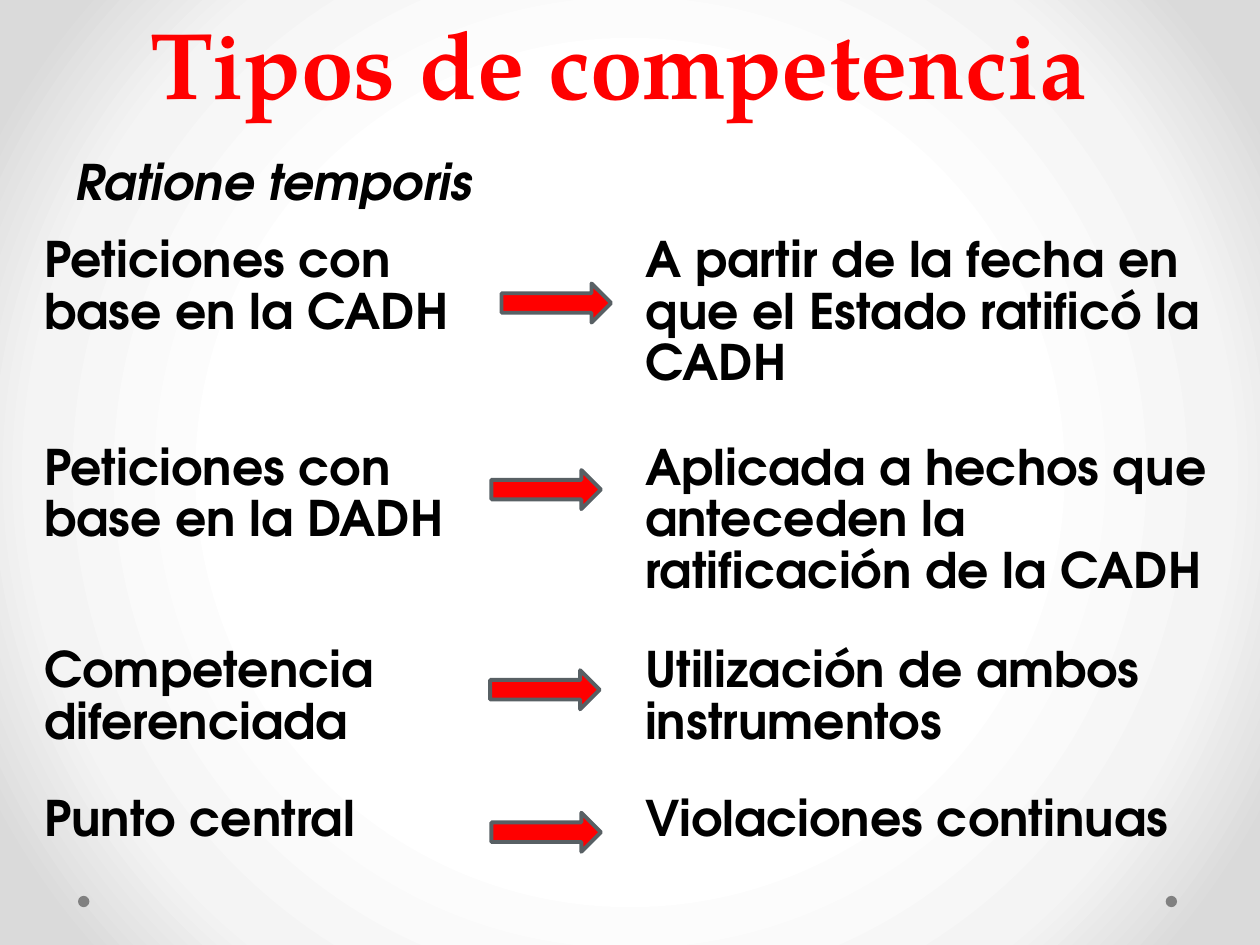
from lxml import etree
from pptx import Presentation
from pptx import util as u
from pptx.dml.color import RGBColor
from pptx.enum import shapes, text
from pptx.oxml import ns

Pt = u.Pt
RED = RGBColor(0xFF, 0x00, 0x00)
BLACK = RGBColor(0x00, 0x00, 0x00)
GRAY = RGBColor(0x80, 0x80, 0x80)
SLATE = RGBColor(0x58, 0x60, 0x64)
WHITE = RGBColor(0xFF, 0xFF, 0xFF)
PALE = RGBColor(0xF4, 0xF4, 0xF4)
SILVER = RGBColor(0xDA, 0xDA, 0xDA)
HEADING_FONT = "TeX Gyre Pagella"
BODY_FONT = "TeX Gyre Adventor"
PLAIN_TABLE = "{2D5ABB26-0587-4C30-8999-92F81FD0307C}"

BODY_STYLE = {"name": BODY_FONT, "size": Pt(28), "bold": True}
TITLE_STYLE = {"name": HEADING_FONT, "size": Pt(54), "bold": True}

COMPETENCES = [
    ("Peticiones con base en la CADH",
     "A partir de la fecha en que el Estado ratificó la CADH"),
    ("Peticiones con base en la DADH",
     "Aplicada a hechos que anteceden la ratificación de la CADH"),
    ("Competencia diferenciada", "Utilización de ambos instrumentos"),
    ("Punto central", "Violaciones continuas"),
]
ROW_HEIGHTS = [118.8, 102.2, 85, 54.7]
COLUMN_WIDTHS = [265.7, 77.8, 342.7]
ARROWS = [(286.6, 162), (280.8, 268.6), (280.1, 383), (280.8, 464.4)]


def set_attributes(target, values):
    for name, value in values.items():
        setattr(target, name, value)


def write_text(frame, wording, style, color, layout):
    paragraph = frame.paragraphs[0]
    set_attributes(paragraph, layout)
    run = paragraph.add_run()
    run.text = wording
    set_attributes(run.font, style)
    run.font.color.rgb = color


def add_background(slide):
    background = slide.background
    background.fill.gradient()
    gradient = slide.element.find(".//" + ns.qn("a:gradFill"))
    for child in list(gradient):
        gradient.remove(child)
    stops = etree.SubElement(gradient, ns.qn("a:gsLst"))
    for position, color in ((50, WHITE), (76, PALE), (92, SILVER)):
        stop = etree.SubElement(stops, ns.qn("a:gs"), pos=str(position * 1000))
        etree.SubElement(stop, ns.qn("a:srgbClr"), val=str(color))
    circle = etree.SubElement(gradient, ns.qn("a:path"))
    circle.set("path", "circle")
    etree.SubElement(circle, ns.qn("a:fillToRect"),
                     {side: "50000" for side in "ltrb"})


def add_text_box(slide, box, wording, style, color, layout, anchor):
    frame = slide.shapes.add_textbox(*map(Pt, box)).text_frame
    set_attributes(frame, {"word_wrap": True, "vertical_anchor": anchor})
    write_text(frame, wording, style, color, layout)


def add_shape(slide, kind, box, color):
    shape = slide.shapes.add_shape(kind, *map(Pt, box))
    shape.shadow.inherit = False
    shape.fill.solid()
    shape.fill.fore_color.rgb = color
    shape.line.fill.background()
    return shape


def add_footer_dots(slide, left, top, width, size):
    for x in (left, left + width - size):
        add_shape(slide, shapes.MSO_SHAPE.OVAL, (x, top, size, size), GRAY)


def add_competence_table(slide, left, top):
    box = (left, top, sum(COLUMN_WIDTHS), sum(ROW_HEIGHTS))
    frame = slide.shapes.add_table(len(ROW_HEIGHTS), len(COLUMN_WIDTHS), *map(Pt, box))
    table = frame.table
    set_attributes(table, {"first_row": False, "horz_banding": False})
    frame.element.find(".//" + ns.qn("a:tableStyleId")).text = PLAIN_TABLE
    for column, width in zip(table.columns, COLUMN_WIDTHS):
        column.width = Pt(width)
    for row, height in zip(table.rows, ROW_HEIGHTS):
        row.height = Pt(height)
    for cell in table.iter_cells():
        cell.fill.background()
        set_attributes(cell, {"margin_left": Pt(5), "margin_right": Pt(5),
                              "margin_top": 0, "margin_bottom": 0})
    for row, (subject, scope) in enumerate(COMPETENCES):
        for column, wording in ((0, subject), (2, scope)):
            write_text(table.cell(row, column).text_frame, wording,
                       BODY_STYLE, BLACK, {"line_spacing": 1.15})


def add_arrows(slide, width, height):
    for left, top in ARROWS:
        arrow = add_shape(slide, shapes.MSO_SHAPE.RIGHT_ARROW,
                          (left, top, width, height), RED)
        arrow.line.color.rgb = SLATE
        arrow.line.width = Pt(2.25)


def main():
    presentation = Presentation()
    set_attributes(presentation, {"slide_width": Pt(720), "slide_height": Pt(540)})
    slide = presentation.slides.add_slide(presentation.slide_layouts[6])
    add_background(slide)
    add_footer_dots(slide, 44.6, 511.9, 628, 6.5)
    add_text_box(slide, (36, 0, 648, 71.3), "Tipos de competencia ", TITLE_STYLE, RED,
                 {"alignment": text.PP_ALIGN.CENTER, "line_spacing": Pt(58)},
                 text.MSO_ANCHOR.BOTTOM)
    add_text_box(slide, (36, 82.8, 648, 399.6), "Ratione temporis",
                 {**BODY_STYLE, "italic": True}, BLACK, {"space_before": Pt(5.6)},
                 text.MSO_ANCHOR.TOP)
    add_competence_table(slide, 20.2, 133.9)
    add_arrows(slide, 62.6, 22.3)
    presentation.save("out.pptx")


if __name__ == "__main__":
    main()
